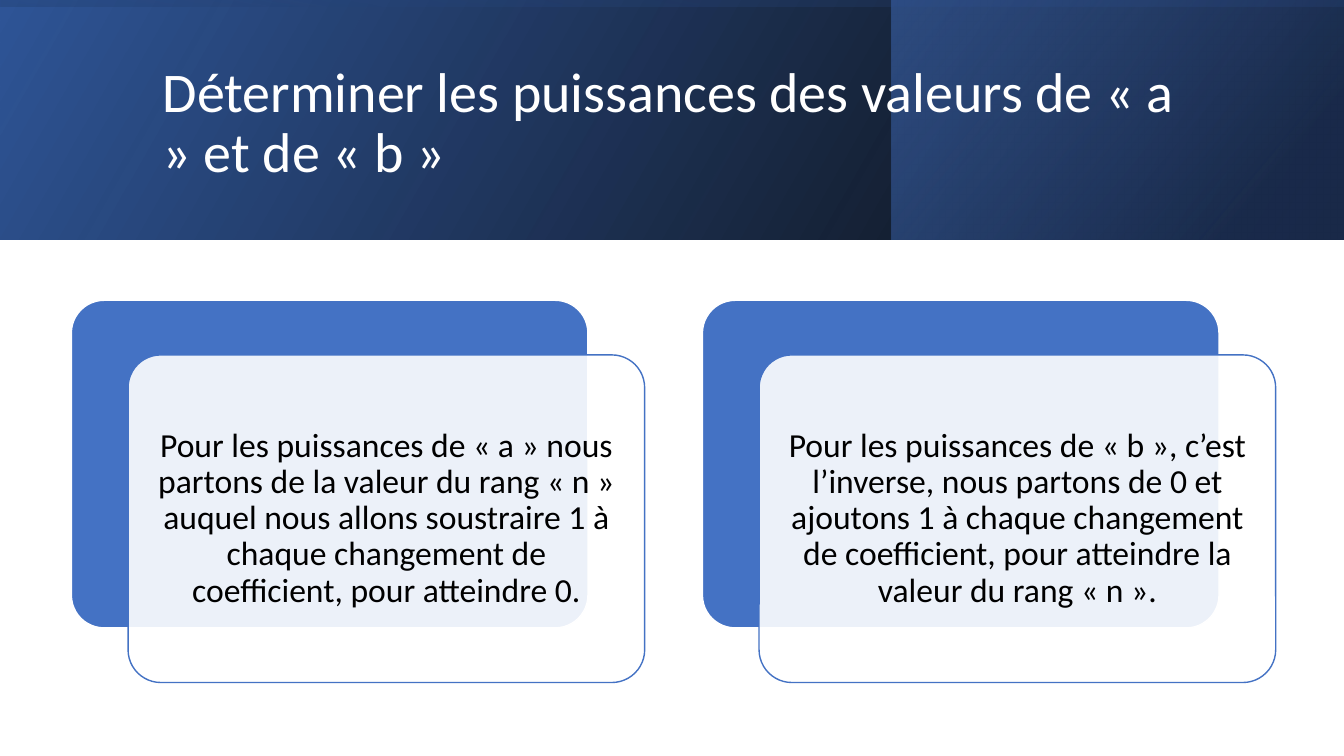
from dataclasses import dataclass

from lxml import etree
from pptx import Presentation
from pptx import util as u
from pptx.dml.color import RGBColor
from pptx.enum import shapes, text
from pptx.oxml import ns

PX = 9525  # EMU per px, 96 px to the inch
FONT = "Calibri"
COLORS = {
    "white": "FFFFFF",
    "black": "000000",
    "blue": "4472C4",
    "deep": "2F5597",
    "navy": "203864",
}


@dataclass
class Box:
    x: int
    y: int
    w: int
    h: int

    def inset(self, d: int) -> "Box":
        return Box(self.x + d, self.y + d, self.w - 2 * d, self.h - 2 * d)

    def emu(self) -> list[int]:
        return [v * PX for v in (self.x, self.y, self.w, self.h)]


@dataclass
class Stop:
    at: float
    color: str
    alpha: int


@dataclass
class Band:
    box: Box
    stops: tuple[Stop, Stop]
    angle: int  # counter-clockwise
    rotation: int = 0


TITLE = "Déterminer les puissances des valeurs de « a » et de « b »"
TITLE_BOX = Box(145, 36, 1020, 165)
BANDS = [
    Band(Box(0, 0, 1280, 228), (Stop(0, "black", 96), Stop(1, "deep", 100)), 30),
    Band(Box(849, 0, 431, 228), (Stop(0.19, "navy", 68), Stop(1, "blue", 48)), 40),
    Band(Box(526, -526, 228, 1280), (Stop(0.23, "deep", 16), Stop(0.99, "black", 45)), 10, 270),
]
CARDS = [
    "Pour les puissances de « a » nous partons de la valeur du rang « n » "
    "auquel nous allons soustraire 1 à chaque changement de coefficient, "
    "pour atteindre 0.",
    "Pour les puissances de « b », c’est l’inverse, nous partons de 0 et "
    "ajoutons 1 à chaque changement de coefficient, pour atteindre la "
    "valeur du rang « n ».",
]
CARD_X, CARD_Y, CARD_W, CARD_H = 68, 286, 492, 312
CARD_PITCH = 601
FRONT_DX, FRONT_DY = 54, 52


def rgb(name: str) -> RGBColor:
    return RGBColor.from_string(COLORS[name])


def set_alpha(fill_xml, percents: list[int]) -> None:
    """Give each colour under fill_xml its opacity, in order."""
    for clr, percent in zip(fill_xml.iter(ns.qn("a:srgbClr")), percents):
        etree.SubElement(clr, ns.qn("a:alpha"), val=str(percent * 1000))


def add_band(s, band: Band) -> None:
    sp = s.shapes.add_shape(shapes.MSO_SHAPE.RECTANGLE, *band.box.emu())
    sp.shadow.inherit = False
    sp.rotation = band.rotation
    sp.line.fill.background()
    sp.fill.gradient()
    sp.fill.gradient_angle = band.angle
    for grad_stop, stop in zip(sp.fill.gradient_stops, band.stops):
        grad_stop.position = stop.at
        grad_stop.color.rgb = rgb(stop.color)
    sp_pr = sp._element.spPr
    sp_pr.find(ns.qn("a:xfrm")).set("flipH", "1")
    set_alpha(sp_pr.find(ns.qn("a:gradFill")), [stop.alpha for stop in band.stops])


def add_panel(s, box: Box, fill: str, line: str, alpha: int = 100) -> None:
    sp = s.shapes.add_shape(shapes.MSO_SHAPE.ROUNDED_RECTANGLE, *box.emu())
    sp.shadow.inherit = False
    sp.adjustments[0] = 0.1
    sp.fill.solid()
    sp.fill.fore_color.rgb = rgb(fill)
    if alpha < 100:
        set_alpha(sp._element.spPr.find(ns.qn("a:solidFill")), [alpha])
    sp.line.color.rgb = rgb(line)
    sp.line.width = u.Pt(1)


def add_text(s, box: Box, words: str, size: int, color: str,
             align: text.PP_ALIGN, margin_y: int) -> None:
    tf = s.shapes.add_textbox(*box.emu()).text_frame
    tf.word_wrap = True
    tf.vertical_anchor = text.MSO_ANCHOR.MIDDLE
    tf.margin_left = tf.margin_right = 10 * PX
    tf.margin_top = tf.margin_bottom = margin_y * PX
    p = tf.paragraphs[0]
    p.alignment = align
    p.line_spacing = 0.9
    r = p.add_run()
    r.text = words
    r.font.name = FONT
    r.font.size = u.Pt(size)
    r.font.color.rgb = rgb(color)


def add_card(s, x: int, words: str) -> None:
    back = Box(x, CARD_Y, CARD_W, CARD_H)
    front = Box(x + FRONT_DX, CARD_Y + FRONT_DY, CARD_W, CARD_H)
    add_panel(s, back, "blue", "white")
    add_panel(s, front, "white", "blue", alpha=90)
    add_text(s, front.inset(9), words, 24, "black", text.PP_ALIGN.CENTER, 10)


def main() -> None:
    prs = Presentation()
    prs.slide_width, prs.slide_height = 1280 * PX, 720 * PX
    s = prs.slides.add_slide(prs.slide_layouts[6])
    for band in BANDS:
        add_band(s, band)
    add_text(s, TITLE_BOX, TITLE, 40, "white", text.PP_ALIGN.LEFT, 5)
    for i, words in enumerate(CARDS):
        add_card(s, CARD_X + i * CARD_PITCH, words)
    prs.save("out.pptx")


if __name__ == "__main__":
    main()
